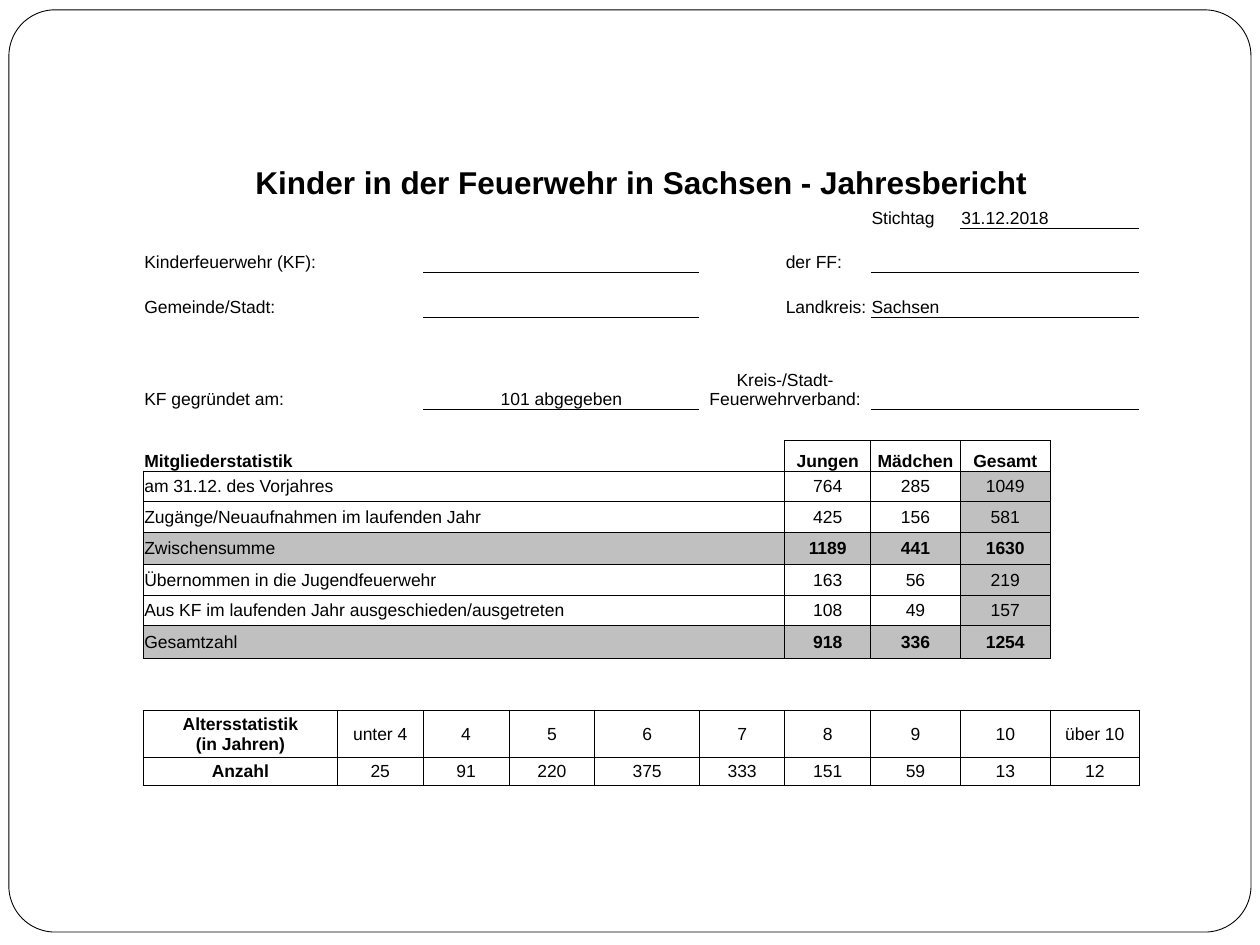
"""Builds the annual report form on children in the Saxon fire brigades."""
import collections
from typing import NamedTuple

import pptx
import pptx.dml.color
import pptx.enum.shapes
import pptx.enum.text
import pptx.oxml
import pptx.oxml.ns
import pptx.table
import pptx.util
from lxml import etree
from pptx.util import Cm, Pt

BLACK = pptx.dml.color.RGBColor(0x00, 0x00, 0x00)
WHITE = pptx.dml.color.RGBColor(0xFF, 0xFF, 0xFF)
GREY = pptx.dml.color.RGBColor(0xC0, 0xC0, 0xC0)
FONT = "Arial"
LEFT, CENTER = pptx.enum.text.PP_ALIGN.LEFT, pptx.enum.text.PP_ALIGN.CENTER
BOTTOM, MIDDLE = pptx.enum.text.MSO_ANCHOR.BOTTOM, pptx.enum.text.MSO_ANCHOR.MIDDLE

COLUMN_WIDTHS = [3.91, 1.73, 1.73, 1.73, 2.11, 1.72, 1.73, 1.81, 1.81, 1.8]
ROW_HEIGHTS = [0.94, 0.54] + [0.44] * 4 + [0.62] * 7 + [0.64, 0.62, 0.62, 0.66, 1.04, 0.96, 0.55]
NEIGHBOURS = {"L": (0, -1, "R"), "R": (0, 1, "L"), "T": (-1, 0, "B"), "B": (1, 0, "T")}

Edges = collections.defaultdict[tuple[int, int], set[str]]


class Entry(NamedTuple):
    row: int
    column: int
    text: str
    columns: int = 1
    rows: int = 1
    centered: bool = False
    bold: bool = False
    size: int = 10
    underlined: bool = False


class MemberLine(NamedTuple):
    label: str
    label_columns: int
    boys: int
    girls: int
    total: int
    is_sum: bool = False


FORM_ENTRIES = [
    Entry(0, 0, "Kinder in der Feuerwehr in Sachsen - Jahresbericht", 10, centered=True, bold=True, size=18),
    Entry(1, 7, "Stichtag"),
    Entry(1, 8, "31.12.2018", 2, underlined=True),
    Entry(3, 0, "Kinderfeuerwehr (KF):"),
    Entry(3, 2, "", 3, underlined=True),
    Entry(3, 6, "der FF:"),
    Entry(3, 7, "", 3, underlined=True),
    Entry(5, 0, "Gemeinde/Stadt:"),
    Entry(5, 2, "", 3, underlined=True),
    Entry(5, 6, "Landkreis:"),
    Entry(5, 7, "Sachsen", 3, underlined=True),
    Entry(7, 5, "Kreis-/Stadt-Feuerwehrverband:", 2, 2, centered=True),
    Entry(7, 7, "", 3, 2, underlined=True),
    Entry(8, 0, "KF gegründet am:"),
    Entry(8, 2, "101 abgegeben", 3, centered=True, underlined=True),
    Entry(10, 0, "Mitgliederstatistik", bold=True),
]
MEMBER_HEADINGS = ["Jungen", "Mädchen", "Gesamt"]
MEMBER_HEADING_ROW, MEMBER_COLUMN, TOTAL_COLUMN = 10, 6, 8
MEMBER_LINES = [
    MemberLine("am 31.12. des Vorjahres", 2, 764, 285, 1049),
    MemberLine("Zugänge/Neuaufnahmen im laufenden Jahr", 3, 425, 156, 581),
    MemberLine("Zwischensumme", 1, 1189, 441, 1630, True),
    MemberLine("Übernommen in die Jugendfeuerwehr", 3, 163, 56, 219),
    MemberLine("Aus KF im laufenden Jahr ausgeschieden/ausgetreten", 4, 108, 49, 157),
    MemberLine("Gesamtzahl", 1, 918, 336, 1254, True),
]
AGE_ROW = 18
AGE_LINES = [
    ["Altersstatistik\v(in Jahren)", "unter 4", "4", "5", "6", "7", "8", "9", "10", "über 10"],
    ["Anzahl", "25", "91", "220", "375", "333", "151", "59", "13", "12"],
]


def add_edges(edges: Edges, row: int, column: int, sides: str) -> None:
    for side in sides:
        down, right, opposite = NEIGHBOURS[side]
        edges[row, column].add(side)
        edges[row + down, column + right].add(opposite)


def write_entry(table: pptx.table.Table, edges: Edges, entry: Entry) -> None:
    cell = table.cell(entry.row, entry.column)
    last_row, last_column = entry.row + entry.rows - 1, entry.column + entry.columns - 1
    if entry.rows * entry.columns > 1:
        cell.merge(table.cell(last_row, last_column))
    if entry.underlined:
        for column in range(entry.column, last_column + 1):
            add_edges(edges, last_row, column, "B")
    cell.text = entry.text
    paragraph = cell.text_frame.paragraphs[0]
    paragraph.alignment = CENTER if entry.centered else LEFT
    paragraph.font.name = FONT
    paragraph.font.size = Pt(entry.size)
    paragraph.font.bold = entry.bold
    paragraph.font.color.rgb = BLACK


def write_members(table: pptx.table.Table, edges: Edges) -> None:
    for offset, heading in enumerate(MEMBER_HEADINGS):
        column = MEMBER_COLUMN + offset
        write_entry(table, edges, Entry(MEMBER_HEADING_ROW, column, heading, centered=True, bold=True))
        add_edges(edges, MEMBER_HEADING_ROW, column, "LRTB")
    for row, line in enumerate(MEMBER_LINES, MEMBER_HEADING_ROW + 1):
        write_entry(table, edges, Entry(row, 0, line.label, line.label_columns))
        for column, count in enumerate((line.boys, line.girls, line.total), MEMBER_COLUMN):
            write_entry(table, edges, Entry(row, column, str(count), centered=True, bold=line.is_sum))
            add_edges(edges, row, column, "LRTB")
        add_edges(edges, row, 0, "L")
        for column in range(TOTAL_COLUMN + 1):
            add_edges(edges, row, column, "TB")
            if line.is_sum or column == TOTAL_COLUMN:
                table.cell(row, column).fill.solid()
                table.cell(row, column).fill.fore_color.rgb = GREY


def write_ages(table: pptx.table.Table, edges: Edges) -> None:
    for row, line in enumerate(AGE_LINES, AGE_ROW):
        for column, text in enumerate(line):
            write_entry(table, edges, Entry(row, column, text, centered=True, bold=column == 0))
            add_edges(edges, row, column, "LRTB")


def finish_cell(cell: pptx.table._Cell, anchor: pptx.enum.text.MSO_ANCHOR, sides: set[str]) -> None:
    cell.margin_left = cell.margin_right = cell.margin_top = Cm(0.02)
    cell.margin_bottom = 0
    cell.vertical_anchor = anchor
    if cell.fill.type is None:
        cell.fill.background()
    if not cell.text:
        end = etree.SubElement(cell.text_frame.paragraphs[0]._p, pptx.oxml.ns.qn("a:endParaRPr"))
        end.set("sz", "1000")
    properties = cell._tc.get_or_add_tcPr()
    for position, side in enumerate("LRTB"):
        paint = f'<a:solidFill><a:srgbClr val="{BLACK}"/></a:solidFill>' if side in sides else "<a:noFill/>"
        border = f'<a:ln{side} {pptx.oxml.ns.nsdecls("a")} w="{Pt(0.5)}">{paint}</a:ln{side}>'
        properties.insert(position, pptx.oxml.parse_xml(border))


def main() -> None:
    presentation = pptx.Presentation()
    presentation.slide_width, presentation.slide_height = Cm(25.4), Cm(19.05)
    slide = presentation.slides.add_slide(presentation.slide_layouts[6])

    frame = slide.shapes.add_shape(
        pptx.enum.shapes.MSO_SHAPE.ROUNDED_RECTANGLE, Cm(0.18), Cm(0.2), Cm(25.04), Cm(18.59))
    frame.adjustments[0] = 0.05
    frame.shadow.inherit = False
    frame.fill.solid()
    frame.fill.fore_color.rgb = WHITE
    frame.line.color.rgb = BLACK
    frame.line.width = Pt(0.5)

    report = slide.shapes.add_table(
        len(ROW_HEIGHTS), len(COLUMN_WIDTHS), Cm(2.89), Cm(3.12),
        Cm(sum(COLUMN_WIDTHS)), Cm(sum(ROW_HEIGHTS))).table
    report.first_row = report.horz_banding = False
    for column, width in zip(report.columns, COLUMN_WIDTHS):
        column.width = Cm(width)
    for row, height in zip(report.rows, ROW_HEIGHTS):
        row.height = Cm(height)

    edges: Edges = collections.defaultdict(set)
    for entry in FORM_ENTRIES:
        write_entry(report, edges, entry)
    write_members(report, edges)
    write_ages(report, edges)
    for row in range(len(ROW_HEIGHTS)):
        anchor = MIDDLE if row > MEMBER_HEADING_ROW else BOTTOM
        for column in range(len(COLUMN_WIDTHS)):
            finish_cell(report.cell(row, column), anchor, edges[row, column])
    presentation.save("out.pptx")


if __name__ == "__main__":
    main()
